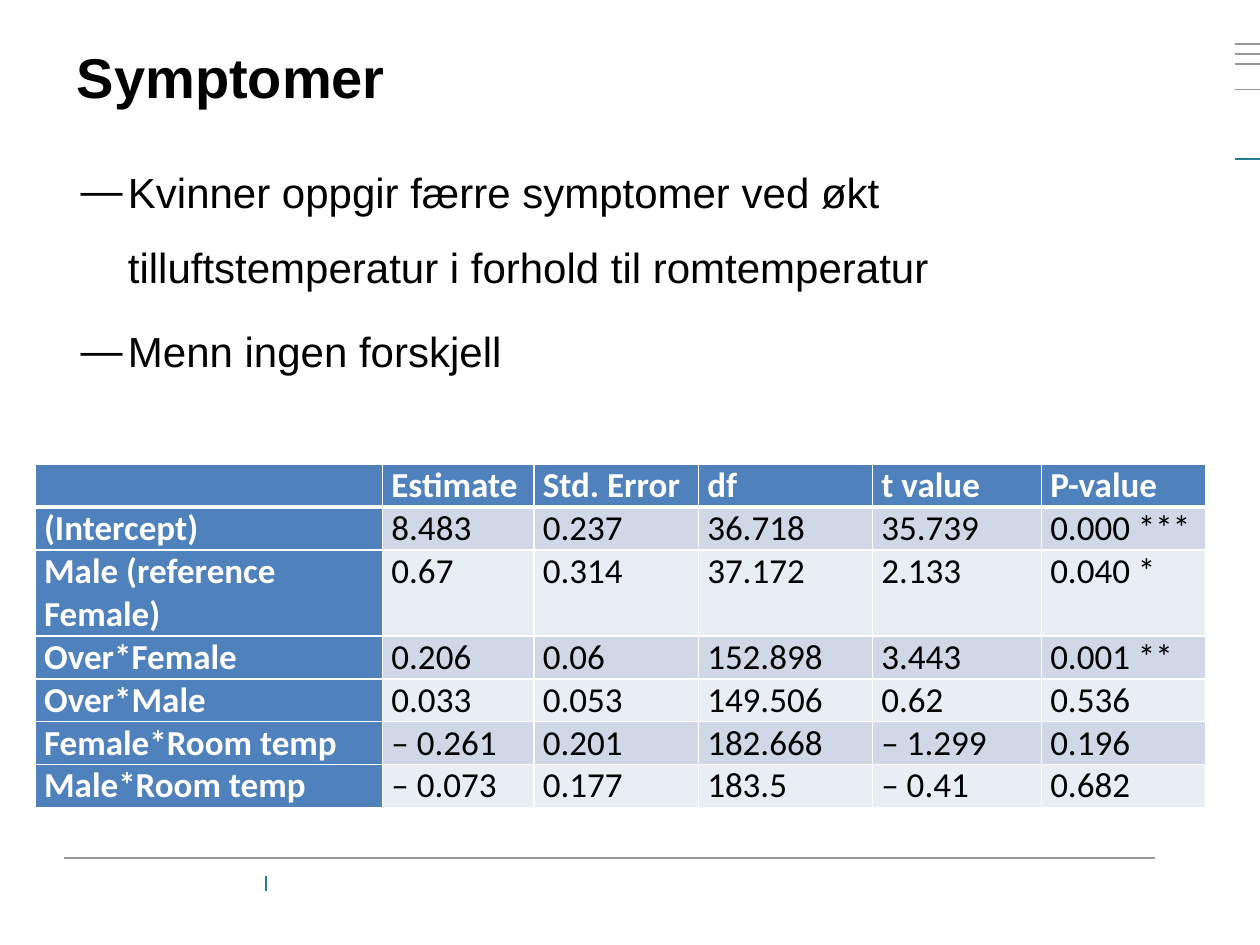
from pptx import Presentation
from pptx.dml.color import RGBColor
from pptx.enum.shapes import MSO_CONNECTOR
from pptx.enum.text import MSO_ANCHOR, MSO_AUTO_SIZE, PP_ALIGN
from pptx.oxml.ns import qn
from pptx.util import Pt
from lxml.etree import SubElement

COLORS = {
    "text": "000000", "white": "FFFFFF", "rule": "999999", "accent": "277D90",
    "header": "4F81BD", "band_dark": "D0D8E8", "band_light": "E9EDF4",
}


def rgb(key):
    return RGBColor.from_string(COLORS[key])


def apply(target, values):
    for attribute, value in values.items():
        setattr(target, attribute, value)


prs = Presentation()
apply(prs, {"slide_width": Pt(720), "slide_height": Pt(540)})
slide = prs.slides.add_slide(prs.slide_layouts[1])
heading, findings = slide.placeholders

rules = [(36.7, 490.3, 660.2, 490.3, "rule"), (151.9, 500.4, 151.9, 509, "accent")]
for y, color in [(25.2, "rule"), (31, "rule"), (36.7, "rule"), (51.1, "rule"), (90.7, "accent")]:
    rules.append((705.6, y, 720, y, color))
for x1, y1, x2, y2, color in rules:
    rule = slide.shapes.add_connector(MSO_CONNECTOR.STRAIGHT, Pt(x1), Pt(y1), Pt(x2), Pt(y2))
    rule.line.color.rgb = rgb(color)
    rule.line.width = Pt(1)
    SubElement(rule.element.spPr, qn("a:effectLst"))

apply(heading, {"left": Pt(36.7), "top": Pt(17.3), "width": Pt(623.5), "height": Pt(73.4)})
apply(heading.text_frame, {
    "text": "Symptomer", "vertical_anchor": MSO_ANCHOR.TOP,
    "margin_top": Pt(7.2), "auto_size": MSO_AUTO_SIZE.NONE,
})
title_line = heading.text_frame.paragraphs[0]
title_line.alignment = PP_ALIGN.LEFT
apply(title_line.font, {"name": "Arial", "size": Pt(32), "bold": True})
title_line.font.color.rgb = rgb("text")

apply(findings, {"left": Pt(38.9), "top": Pt(77), "width": Pt(623.5), "height": Pt(385.2)})
apply(findings.text_frame, {
    "text": "Kvinner oppgir færre symptomer ved økt tilluftstemperatur i forhold til romtemperatur\n"
            "Menn ingen forskjell",
    "vertical_anchor": MSO_ANCHOR.TOP, "auto_size": MSO_AUTO_SIZE.NONE,
})
for number, finding in enumerate(findings.text_frame.paragraphs):
    apply(finding, {"line_spacing": 1.5, "space_before": Pt(4.8 if number else 0)})
    indents = finding._p.get_or_add_pPr()
    indents.set("marL", str(Pt(27)))
    indents.set("indent", str(-Pt(27)))
    SubElement(indents, qn("a:buFont"), typeface="Arial")
    SubElement(indents, qn("a:buChar"), char="—")
    apply(finding.font, {"name": "Arial", "size": Pt(24)})
    finding.font.color.rgb = rgb("text")

estimates = [
    ["", "Estimate", "Std. Error", "df", "t value", "P-value"],
    ["(Intercept)", "8.483", "0.237", "36.718", "35.739", "0.000 ***"],
    ["Male (reference Female)", "0.67", "0.314", "37.172", "2.133", "0.040 *"],
    ["Over*Female", "0.206", "0.06", "152.898", "3.443", "0.001 **"],
    ["Over*Male", "0.033", "0.053", "149.506", "0.62", "0.536"],
    ["Female*Room temp", "– 0.261", "0.201", "182.668", "– 1.299", "0.196"],
    ["Male*Room temp", "– 0.073", "0.177", "183.5", "– 0.41", "0.682"],
]
column_widths = [198.5, 86.5, 94, 99.5, 96.5, 94]
row_heights = [24.4, 24.4, 48.8, 24.4, 24.4, 24.4, 24.4]
model_frame = slide.shapes.add_table(
    len(estimates), len(column_widths), Pt(20.2), Pt(265.3), Pt(sum(column_widths)), Pt(sum(row_heights)))
model = model_frame.table
for column, width in zip(model.columns, column_widths):
    column.width = Pt(width)
for row, height in zip(model.rows, row_heights):
    row.height = Pt(height)

for r, values in enumerate(estimates):
    for c, value in enumerate(values):
        cell = model.cell(r, c)
        is_header = r == 0 or c == 0
        apply(cell, {
            "text": value, "vertical_anchor": MSO_ANCHOR.TOP,
            "margin_left": Pt(5), "margin_right": Pt(5), "margin_top": 0, "margin_bottom": 0,
        })
        entry = cell.text_frame.paragraphs[0]
        apply(entry.font, {"name": "Calibri", "size": Pt(20), "bold": is_header})
        entry.font.color.rgb = rgb("white" if is_header else "text")
        for side in ("lnL", "lnR", "lnT", "lnB"):
            thick = (r == 0 and side == "lnB") or (r == 1 and side == "lnT")
            border = SubElement(cell._tc.get_or_add_tcPr(), qn(f"a:{side}"), w=str(Pt(3 if thick else 1)))
            SubElement(SubElement(border, qn("a:solidFill")), qn("a:srgbClr"), val=COLORS["white"])
        cell.fill.solid()
        cell.fill.fore_color.rgb = rgb("header" if is_header else "band_dark" if r % 2 else "band_light")

model_frame.element.addprevious(heading.element)
model_frame.element.addnext(findings.element)

prs.save("out.pptx")
